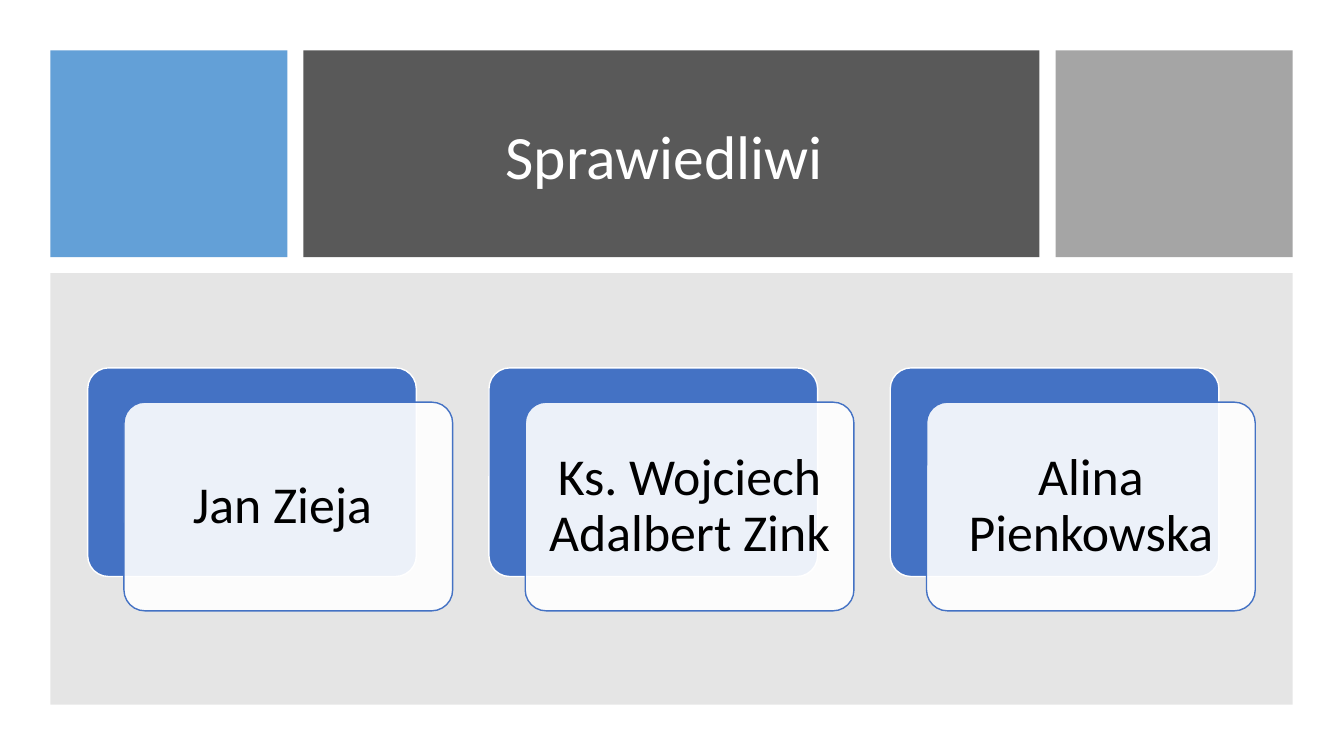
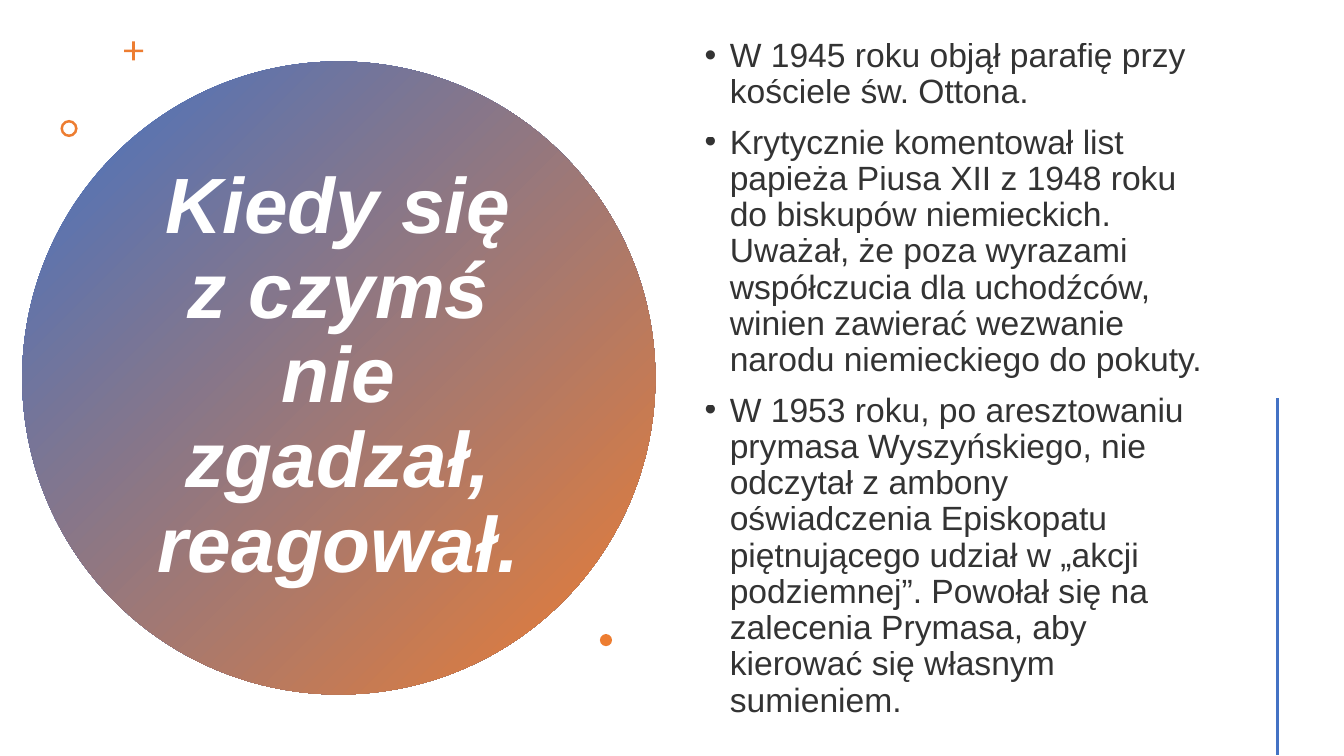
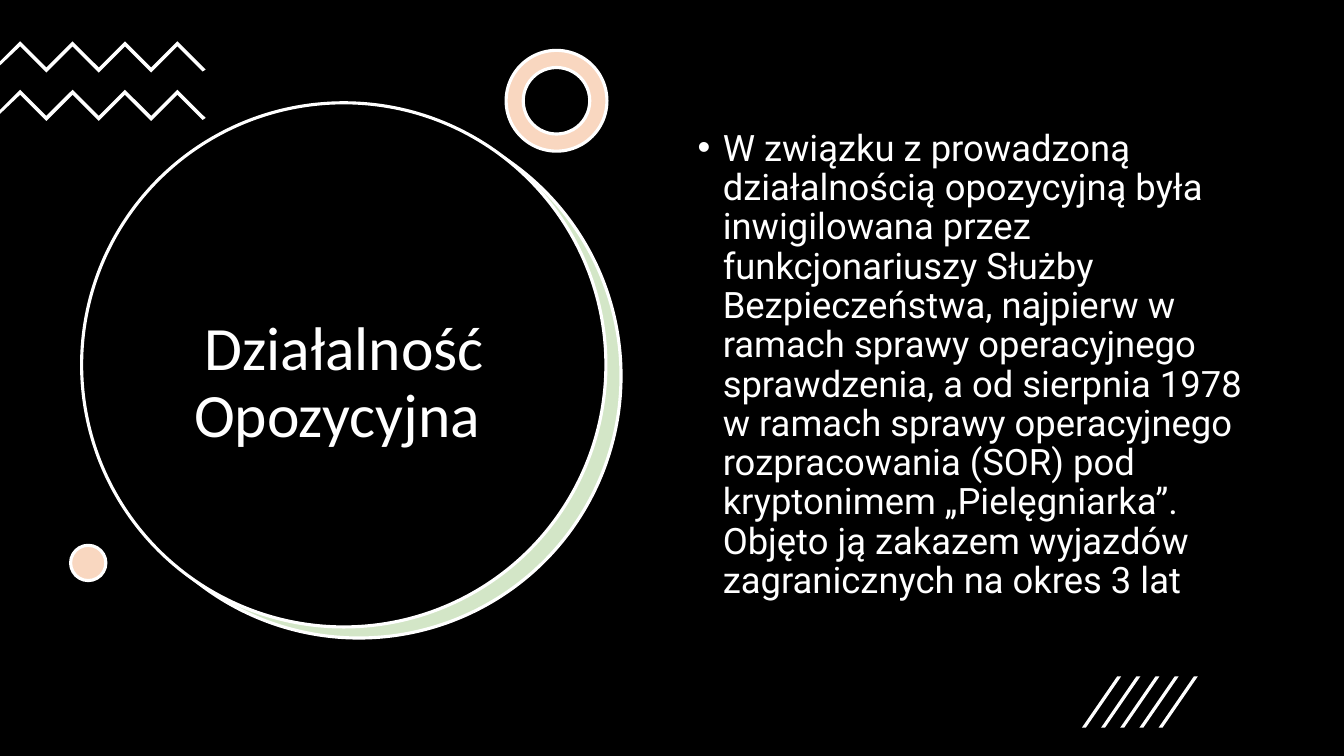
import pptx
import pptx.dml.color
import pptx.enum.shapes
import pptx.enum.text
import pptx.oxml.ns
import pptx.util
from lxml import etree

Inches = pptx.util.Inches
Pt = pptx.util.Pt
RGB = pptx.dml.color.RGBColor
SHAPE = pptx.enum.shapes.MSO_SHAPE
ALIGN = pptx.enum.text.PP_ALIGN
ANCHOR = pptx.enum.text.MSO_ANCHOR
qn = pptx.oxml.ns.qn

WHITE = RGB(0xFF, 0xFF, 0xFF)
BLACK = RGB(0x00, 0x00, 0x00)
BLUE = RGB(0x44, 0x72, 0xC4)
SKY = RGB(0x5B, 0x9B, 0xD5)
ORANGE = RGB(0xED, 0x7D, 0x31)
GREEN = RGB(0x70, 0xAD, 0x47)
CHARCOAL = RGB(0x59, 0x59, 0x59)
SILVER = RGB(0xA5, 0xA5, 0xA5)
GREY = RGB(0x80, 0x80, 0x80)

TITLE = {"name": "Calibri", "size": Pt(44)}
CARD_NAME = {"name": "Calibri", "size": Pt(37)}
SLOGAN = {"name": "Arial", "size": Pt(56), "bold": True, "italic": True}
PARISH_BODY = {"name": "Arial", "size": Pt(24)}
OPPOSITION_BODY = {"name": "Roboto", "size": Pt(26)}
CENTRED = {"alignment": ALIGN.CENTER, "line_spacing": 0.9}
BULLETED = {"alignment": ALIGN.LEFT, "line_spacing": 0.9, "space_before": Pt(10)}
OUTLINE = 2.25


def apply_format(target, values):
    for attribute, value in values.items():
        setattr(target, attribute, value)


def paint(fill, properties, colour, opacity=100):
    fill.solid()
    fill.fore_color.rgb = colour
    if opacity < 100:
        tone = properties.find(qn("a:solidFill"))[0]
        etree.SubElement(tone, qn("a:alpha"), val=str(opacity * 1000))


def style(shape, colour, opacity=100, edge=None, edge_width=1):
    shape.shadow.inherit = False
    paint(shape.fill, shape._element.spPr, colour, opacity)
    if edge is None:
        shape.line.fill.background()
    else:
        shape.line.color.rgb = edge
        shape.line.width = Pt(edge_width)
    return shape


def add_block(slide, kind, box, colour, adjust=None, **look):
    shape = slide.shapes.add_shape(kind, *map(Inches, box))
    if adjust is not None:
        shape.adjustments[0] = adjust
    return style(shape, colour, **look)


def add_tinted(slide, kind, box, colour, adjust=None):
    add_block(slide, kind, box, WHITE, adjust)
    add_block(slide, kind, box, colour, adjust, opacity=30, edge=WHITE, edge_width=OUTLINE)


def add_bullet(paragraph):
    properties = paragraph._p.get_or_add_pPr()
    properties.set("marL", str(Inches(0.25)))
    properties.set("indent", str(-Inches(0.25)))
    etree.SubElement(properties, qn("a:buFont"), typeface="Arial")
    etree.SubElement(properties, qn("a:buChar"), char="•")


def write(frame, texts, font, layout, colour, opacity=100, anchor=ANCHOR.MIDDLE):
    apply_format(frame, {"word_wrap": True, "vertical_anchor": anchor})
    for index, text in enumerate(texts):
        paragraph = frame.add_paragraph() if index else frame.paragraphs[0]
        apply_format(paragraph, layout)
        if layout is BULLETED:
            add_bullet(paragraph)
        run = paragraph.add_run()
        run.text = text
        apply_format(run.font, font)
        paint(run.font.fill, run._r.get_or_add_rPr(), colour, opacity)


def add_text(slide, box, texts, font, layout, colour, **options):
    frame = slide.shapes.add_textbox(*map(Inches, box)).text_frame
    write(frame, texts, font, layout, colour, **options)


def add_title(slide, box, text, font=TITLE):
    add_text(slide, box, [text], font, CENTRED, WHITE)


def add_card(slide, left, name):
    width, height, top = 3.26, 2.07, 3.65
    add_block(slide, SHAPE.ROUNDED_RECTANGLE, (left, top, width, height), BLUE, 0.1, edge=WHITE)
    front = add_block(slide, SHAPE.ROUNDED_RECTANGLE, (left + 0.36, top + 0.34, width, height),
                      WHITE, 0.1, opacity=90, edge=BLUE)
    margins = ("margin_left", "margin_top", "margin_right", "margin_bottom")
    apply_format(front.text_frame, dict.fromkeys(margins, Inches(0.15)))
    write(front.text_frame, [name], CARD_NAME, CENTRED, BLACK)


def add_zigzag(slide, top):
    peaks = [(0.2 + 0.26 * i, top + 0.26 * (i % 2)) for i in range(7)]
    lower = [(x, y + 0.05) for x, y in reversed(peaks)]
    outline = (peaks + [(2.04, top + 0.28), (2.01, top + 0.3)]
               + lower + [(0, top + 0.24), (0, top + 0.2)])
    points = [(Inches(x), Inches(y)) for x, y in outline]
    builder = slide.shapes.build_freeform(*points[0])
    builder.add_line_segments(points[1:], close=True)
    style(builder.convert_to_shape(), WHITE)


def add_rule(slide, start, end, colour, width):
    rule = slide.shapes.add_connector(pptx.enum.shapes.MSO_CONNECTOR.STRAIGHT,
                                      *map(Inches, start + end))
    rule.line.color.rgb = colour
    rule.line.width = Pt(width)
    etree.SubElement(rule._element.spPr, qn("a:effectLst"))


def build_righteous(slide):
    add_block(slide, SHAPE.RECTANGLE, (0.5, 0.5, 2.35, 2.05), SKY, opacity=95)
    add_block(slide, SHAPE.RECTANGLE, (3.01, 0.5, 7.3, 2.05), CHARCOAL)
    add_block(slide, SHAPE.RECTANGLE, (10.47, 0.5, 2.35, 2.05), SILVER)
    add_block(slide, SHAPE.RECTANGLE, (0.5, 2.71, 12.32, 4.28), GREY, opacity=20)
    add_title(slide, (3.33, 0.8, 6.66, 1.56), "Sprawiedliwi ")
    names = ["Jan Zieja ", "Ks. Wojciech Adalbert Zink", "Alina Pienkowska"]
    for index, name in enumerate(names):
        add_card(slide, 0.87 + 3.98 * index, name)


def build_parish(slide):
    disc = add_block(slide, SHAPE.OVAL, (0.22, 0.61, 6.28, 6.28), BLUE)
    disc.fill.gradient()
    disc.fill.gradient_angle = 315
    for stop, colour in zip(disc.fill.gradient_stops, (BLUE, ORANGE)):
        stop.color.rgb = colour
    add_title(slide, (1.36, 1.41, 3.99, 4.67), "Kiedy się z czymś nie zgadzał, reagował.", SLOGAN)
    add_block(slide, SHAPE.CROSS, (1.23, 0.41, 0.19, 0.19), ORANGE, 0.43)
    add_block(slide, SHAPE.DONUT, (0.6, 1.19, 0.17, 0.17), ORANGE, 0.15)
    add_block(slide, SHAPE.OVAL, (5.95, 6.29, 0.12, 0.12), ORANGE)
    add_text(slide, (6.89, 0.57, 5.22, 6.38), [
        "W 1945 roku objął parafię przy kościele św. Ottona.",
        "Krytycznie komentował list papieża Piusa XII z 1948 roku do biskupów niemieckich. "
        "Uważał, że poza wyrazami współczucia dla uchodźców, winien zawierać wezwanie "
        "narodu niemieckiego do pokuty.",
        "W 1953 roku, po aresztowaniu prymasa Wyszyńskiego, nie odczytał z ambony "
        "oświadczenia Episkopatu piętnującego udział w „akcji podziemnej”. Powołał się na "
        "zalecenia Prymasa, aby kierować się własnym sumieniem.",
    ], PARISH_BODY, BULLETED, BLACK, opacity=80)
    add_rule(slide, (12.67, 3.95), (12.67, 7.49), BLUE, 2)


def build_opposition(slide):
    paint(slide.background.fill, None, BLACK)
    add_tinted(slide, SHAPE.OVAL, (0.96, 1.13, 5.2, 5.2), GREEN)
    add_block(slide, SHAPE.OVAL, (0.81, 1.02, 5.2, 5.2), BLACK, edge=WHITE, edge_width=OUTLINE)
    add_title(slide, (1.21, 2.05, 4.41, 3.52), "Działalność Opozycyjna ")
    for top in (0.41, 0.89):
        add_zigzag(slide, top)
    add_tinted(slide, SHAPE.DONUT, (5.02, 0.5, 1, 1), ORANGE, 0.17)
    add_tinted(slide, SHAPE.OVAL, (0.7, 5.41, 0.35, 0.35), ORANGE)
    add_text(slide, (6.82, 1.24, 5.71, 4.76), [
        "W związku z prowadzoną działalnością opozycyjną była inwigilowana przez "
        "funkcjonariuszy Służby Bezpieczeństwa, najpierw w ramach sprawy operacyjnego "
        "sprawdzenia, a od sierpnia 1978 w ramach sprawy operacyjnego rozpracowania (SOR) "
        "pod kryptonimem „Pielęgniarka”. Objęto ją zakazem wyjazdów zagranicznych na okres "
        "3 lat",
    ], OPPOSITION_BODY, BULLETED, WHITE, anchor=ANCHOR.TOP)
    for index in range(5):
        add_block(slide, SHAPE.PARALLELOGRAM, (10.73 + 0.19 * index, 6.71, 0.39, 0.51), WHITE, 0.9)


def main():
    deck = pptx.Presentation()
    apply_format(deck, {"slide_width": Inches(13.33), "slide_height": Inches(7.5)})
    for build in (build_righteous, build_parish, build_opposition):
        build(deck.slides.add_slide(deck.slide_layouts[6]))
    deck.save("out.pptx")


if __name__ == "__main__":
    main()
